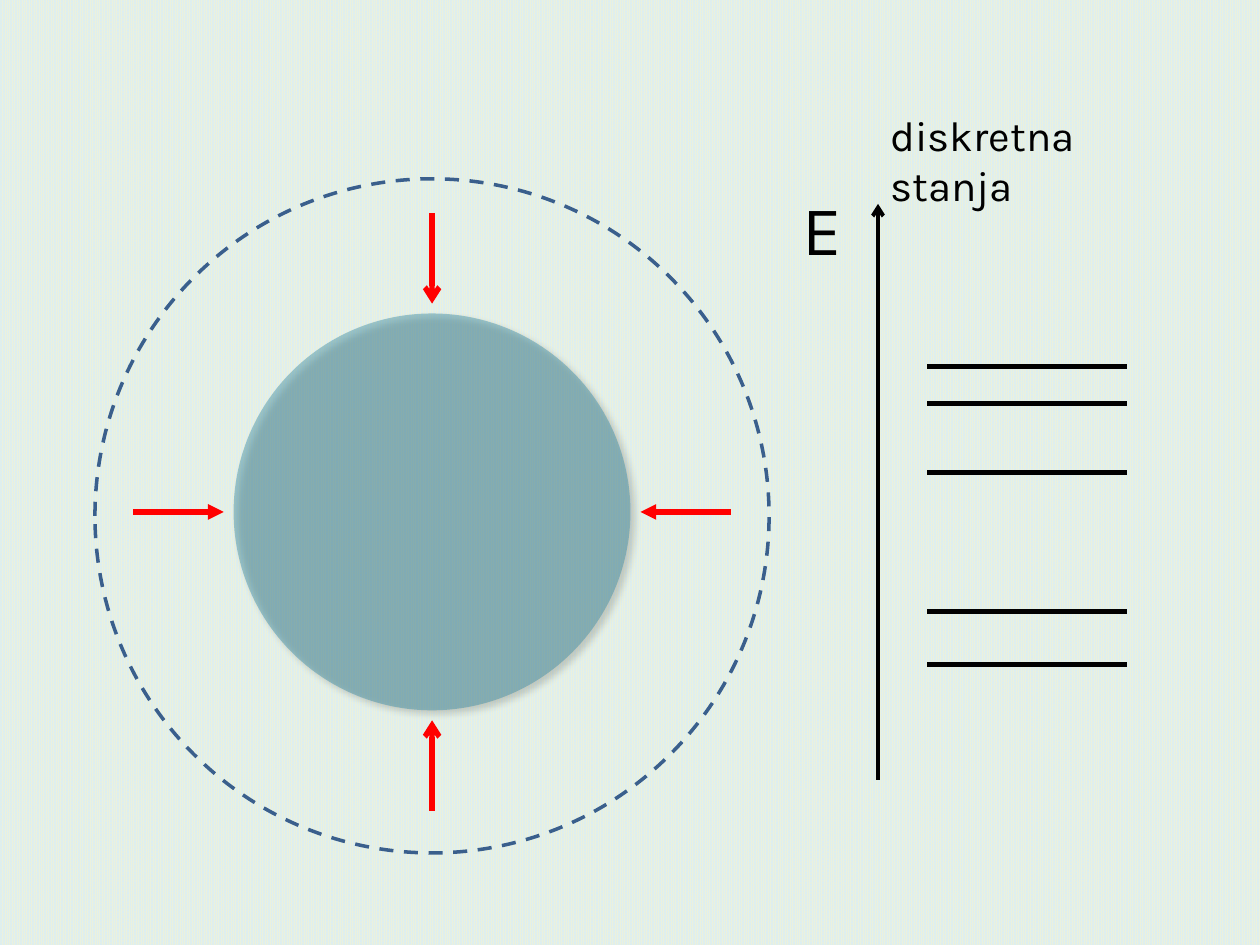
from pptx import Presentation
from pptx.dml.color import RGBColor
from pptx.enum.dml import MSO_LINE, MSO_PATTERN
from pptx.enum.shapes import MSO_CONNECTOR, MSO_SHAPE
from pptx.enum.text import MSO_AUTO_SIZE
from pptx.oxml import parse_xml
from pptx.oxml.ns import nsdecls, qn
from pptx.util import Cm, Pt
from lxml.etree import SubElement

CENTER_X, CENTER_Y = 8.71, 10.32
ARROW_TIP, ARROW_START = 4.2, 6.02
LEVEL_LEFT, LEVEL_RIGHT = 18.69, 22.71
LEVELS = [7.39, 8.13, 9.53, 12.32, 13.39]
ARROWS = [(0, -1, "arrow"), (0, 1, "arrow"), (-1, 0, "triangle"), (1, 0, "triangle")]


def color(value):
    return RGBColor.from_string(value)


def paint_background(slide, front, back):
    fill = slide.background.fill
    fill.patterned()
    fill.pattern = MSO_PATTERN.PERCENT_90
    fill.fore_color.rgb = color(front)
    fill.back_color.rgb = color(back)


def add_line(slide, start, end, line_color, width, arrowhead=None):
    points = [Cm(value) for value in (*start, *end)]
    connector = slide.shapes.add_connector(MSO_CONNECTOR.STRAIGHT, *points)
    connector.line.color.rgb = color(line_color)
    connector.line.width = Pt(width)
    if arrowhead:
        SubElement(connector.line._get_or_add_ln(), qn("a:tailEnd"), type=arrowhead)
    SubElement(connector._element.spPr, qn("a:effectLst"))


def add_circle(slide, center_x, center_y, diameter):
    left, top = center_x - diameter / 2, center_y - diameter / 2
    circle = slide.shapes.add_shape(
        MSO_SHAPE.OVAL, Cm(left), Cm(top), Cm(diameter), Cm(diameter)
    )
    circle.shadow.inherit = False
    return circle


def add_core(slide):
    core = add_circle(slide, CENTER_X, CENTER_Y, 8)
    core.fill.solid()
    core.fill.fore_color.rgb = color("31859C")
    core.line.fill.background()
    properties = core._element.spPr
    fill_color = properties.find(qn("a:solidFill")).find(qn("a:srgbClr"))
    SubElement(fill_color, qn("a:alpha"), val="41000")
    shadow = parse_xml(
        f'<a:outerShdw {nsdecls("a")} blurRad="{Pt(4)}" dist="{Pt(3)}" dir="2700000" '
        'algn="tl" rotWithShape="0"><a:srgbClr val="000000"><a:alpha val="40000"/>'
        "</a:srgbClr></a:outerShdw>"
    )
    properties.find(qn("a:effectLst")).append(shadow)


def add_boundary(slide):
    boundary = add_circle(slide, CENTER_X, 10.4, 13.59)
    boundary.fill.background()
    boundary.line.color.rgb = color("3A5F8C")
    boundary.line.width = Pt(2)
    boundary.line.dash_style = MSO_LINE.DASH


def add_label(slide, text, left, top, width, height, size, wrap):
    box = slide.shapes.add_textbox(Cm(left), Cm(top), Cm(width), Cm(height))
    frame = box.text_frame
    frame.word_wrap = wrap
    frame.auto_size = MSO_AUTO_SIZE.SHAPE_TO_FIT_TEXT
    frame.text = text
    font = frame.paragraphs[0].runs[0].font
    font.name = "Karla"
    font.size = Pt(size)
    font.color.rgb = color("000000")


def main():
    deck = Presentation()
    deck.slide_width, deck.slide_height = Cm(25.4), Cm(19.05)
    slide = deck.slides.add_slide(deck.slide_layouts[6])
    paint_background(slide, "EBF1DE", "DBEEF4")

    add_core(slide)
    for level in LEVELS:
        add_line(slide, (LEVEL_LEFT, level), (LEVEL_RIGHT, level), "000000", 3)
    for step_x, step_y, arrowhead in ARROWS:
        start, tip = [
            (CENTER_X + step_x * radius, CENTER_Y + step_y * radius)
            for radius in (ARROW_START, ARROW_TIP)
        ]
        add_line(slide, start, tip, "FF0000", 3, arrowhead)
    add_boundary(slide)

    add_label(slide, "diskretna stanja", 17.7, 2.08, 6.02, 1.27, 24, True)
    add_line(slide, (17.7, 15.72), (17.7, 4.11), "000000", 2.25, "arrow")
    add_label(slide, "E", 15.93, 3.61, 1.22, 1.96, 40, False)
    deck.save("out.pptx")


if __name__ == "__main__":
    main()
